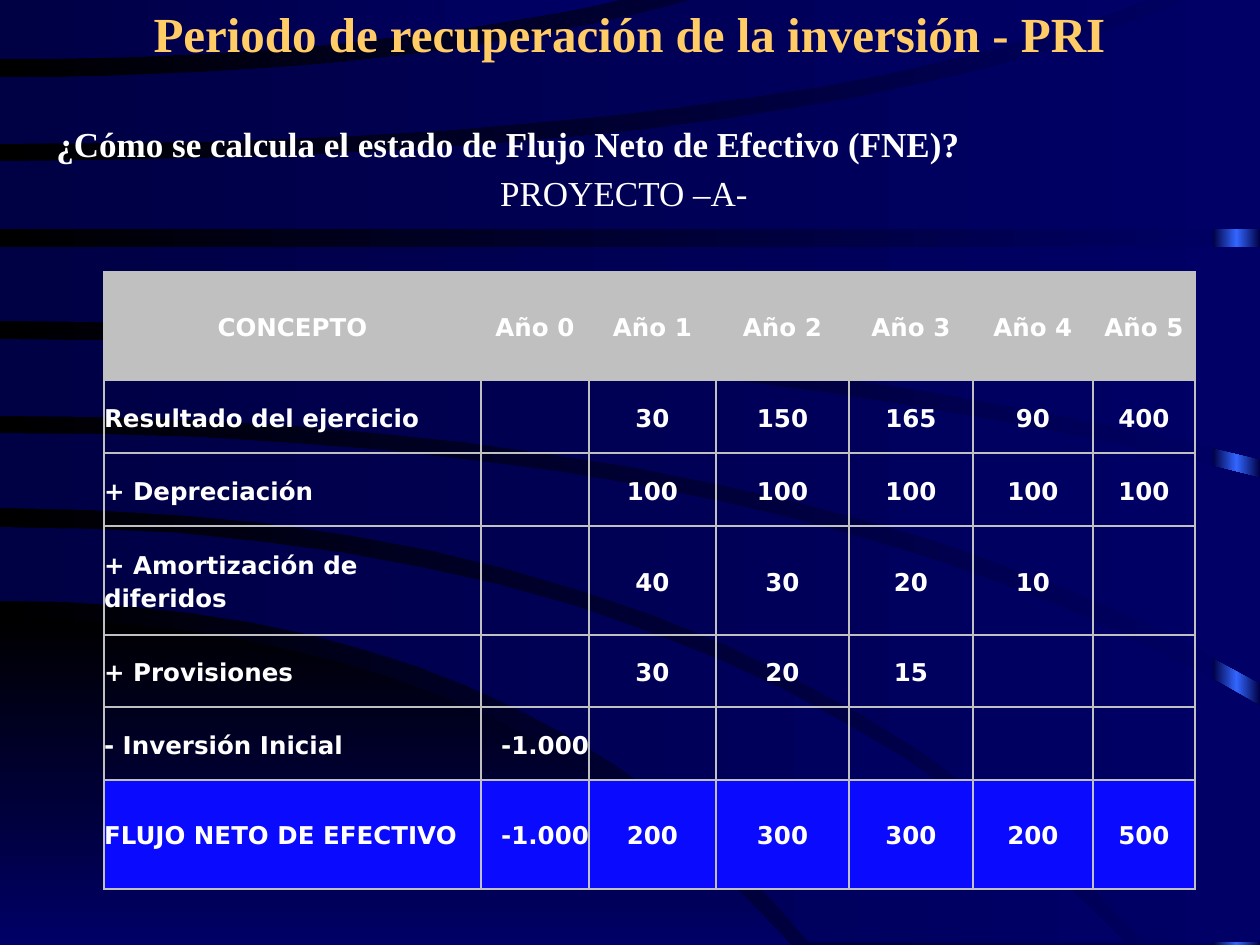
"""Builds the slide on the net cash flow of project A."""
import copy

import pptx
import pptx.dml.color
import pptx.enum.shapes
import pptx.enum.text
import pptx.oxml
import pptx.oxml.ns
import pptx.util

RGBColor = pptx.dml.color.RGBColor
ALIGN = pptx.enum.text.PP_ALIGN
MIDDLE = pptx.enum.text.MSO_ANCHOR.MIDDLE
Pt = pptx.util.Pt

BLACK = RGBColor(0x00, 0x00, 0x00)
NAVY = RGBColor(0x00, 0x00, 0x66)
DARK_NAVY = RGBColor(0x00, 0x00, 0x44)
BRIGHT_BLUE = RGBColor(0x33, 0x66, 0xFF)
TOTAL_BLUE = RGBColor(0x0A, 0x0A, 0xFF)
SILVER = RGBColor(0xC0, 0xC0, 0xC0)
GOLD = RGBColor(0xFF, 0xCC, 0x66)
WHITE = RGBColor(0xFF, 0xFF, 0xFF)

PX = 914400 / 126
WIDTH, HEIGHT = 1260, 945
SERIF, SANS = "Times New Roman", "DejaVu Sans"

TITLE = "Periodo de recuperación de la inversión - PRI"
QUESTION = "¿Cómo se calcula el estado de Flujo Neto de Efectivo (FNE)?"
PROJECT = "PROYECTO –A-"

CASH_FLOW = [
    ("CONCEPTO", "Año 0", "Año 1", "Año 2", "Año 3", "Año 4", "Año 5"),
    ("Resultado del ejercicio", "", "30", "150", "165", "90", "400"),
    ("+ Depreciación", "", "100", "100", "100", "100", "100"),
    ("+ Amortización de diferidos", "", "40", "30", "20", "10", ""),
    ("+ Provisiones", "", "30", "20", "15", "", ""),
    ("- Inversión Inicial", "-1.000", "", "", "", "", ""),
    ("FLUJO NETO DE EFECTIVO", "-1.000", "200", "300", "300", "200", "500"),
]
COLUMN_WIDTHS = [377, 108, 127, 133, 124, 120, 102]
ROW_HEIGHTS = [108, 73, 73, 109, 72, 73, 109]
TABLE_LEFT, TABLE_TOP = 104, 272

CURVE_STEPS = 16
CORNER_EDGE = (619, 503, 791, HEIGHT)
BAND_EDGES = [
    ((527, 730, 1125, 942), (601, 532, 809, 942)),
    ((433, 806, WIDTH, 706), (508, 740, 1145, 942)),
    ((339, 718, WIDTH, 478), (416, 796, WIDTH, 683)),
    ((247, 630, WIDTH, 247), (321, 694, WIDTH, 459)),
    ((161, 842, 1188, -3), (229, 630, WIDTH, 229)),
    ((77, 426, 701, -3), (144, 783, 1155, -3)),
    ((-3, 315, 631, -3), (59, 359, 631, -3)),
]


def emu(px):
    return round(px * PX)


def trace_edge(start_y, bend_x, end_x, end_y):
    steps = [i / CURVE_STEPS for i in range(CURVE_STEPS + 1)]
    return [(round(2 * t * (1 - t) * bend_x + t * t * end_x),
             round(start_y + t * t * (end_y - start_y))) for t in steps]


def trace_band(upper_edge, lower_edge):
    upper, lower = trace_edge(*upper_edge), trace_edge(*lower_edge)
    (upper_x, upper_y), (lower_x, lower_y) = upper[-1], lower[-1]
    outer = min if upper_y < upper[0][1] else max
    corner = (max(upper_x, lower_x), outer(upper_y, lower_y))
    return upper + [corner] + lower[::-1]


def paint_gradient(fill, start, end, angle=0):
    fill.gradient()
    fill.gradient_angle = angle
    for stop, color, position in zip(fill.gradient_stops, (start, end), (0, 1)):
        stop.color.rgb = color
        stop.position = position


def add_outline(slide, points, start, end, angle=0):
    builder = slide.shapes.build_freeform(*points[0], scale=PX)
    builder.add_line_segments(points[1:], close=True)
    outline = builder.convert_to_shape()
    outline.shadow.inherit = False
    outline.line.fill.background()
    paint_gradient(outline.fill, start, end, angle)


def add_glow_strip(slide):
    strip = slide.shapes.add_shape(
        pptx.enum.shapes.MSO_SHAPE.RECTANGLE, emu(1213), 0, emu(47), emu(HEIGHT))
    strip.shadow.inherit = False
    strip.line.fill.background()
    paint_gradient(strip.fill, DARK_NAVY, BRIGHT_BLUE)
    strip.fill.gradient_stops[1].position = 0.5
    stops = strip.element.spPr.find(".//" + pptx.oxml.ns.qn("a:gsLst"))
    last = copy.deepcopy(stops[0])
    last.set("pos", "100000")
    stops.append(last)


def add_run(paragraph, text, size, font, color, bold=True):
    run = paragraph.add_run()
    run.text = text
    run.font.size = Pt(size)
    run.font.name = font
    run.font.bold = bold
    run.font.color.rgb = color


def add_frame(slide, *box):
    frame = slide.shapes.add_textbox(*map(emu, box)).text_frame
    frame.word_wrap = True
    return frame


def add_borders(cell):
    properties = cell._tc.get_or_add_tcPr()
    for side in "LRTB":
        properties.append(pptx.oxml.parse_xml(
            f'<a:ln{side} {pptx.oxml.ns.nsdecls("a")} w="12700"><a:solidFill>'
            f'<a:srgbClr val="{SILVER}"/></a:solidFill></a:ln{side}>'))


def fill_cell(cell, text, align, color):
    cell.margin_left = cell.margin_right = cell.margin_top = cell.margin_bottom = 0
    cell.vertical_anchor = MIDDLE
    add_borders(cell)
    if color:
        cell.fill.solid()
        cell.fill.fore_color.rgb = color
    else:
        cell.fill.background()
    if text:
        paragraph = cell.text_frame.paragraphs[0]
        paragraph.alignment = align
        paragraph.line_spacing = 1.15
        paragraph.space_after = Pt(10)
        add_run(paragraph, text, 14, SANS, WHITE)


def add_cash_flow(slide):
    table = slide.shapes.add_table(
        len(CASH_FLOW), len(COLUMN_WIDTHS), emu(TABLE_LEFT), emu(TABLE_TOP),
        emu(sum(COLUMN_WIDTHS)), emu(sum(ROW_HEIGHTS))).table
    table.first_row = table.horz_banding = False
    for column, width in zip(table.columns, COLUMN_WIDTHS):
        column.width = emu(width)
    row_fills = {0: SILVER, len(CASH_FLOW) - 1: TOTAL_BLUE}
    for r, (concept_row, height) in enumerate(zip(CASH_FLOW, ROW_HEIGHTS)):
        table.rows[r].height = emu(height)
        for c, text in enumerate(concept_row):
            align = ALIGN.CENTER
            if r > 0 and c < 2:
                align = (ALIGN.LEFT, ALIGN.RIGHT)[c]
            fill_cell(table.cell(r, c), text, align, row_fills.get(r))


def main():
    deck = pptx.Presentation()
    deck.slide_width, deck.slide_height = emu(WIDTH), emu(HEIGHT)
    slide = deck.slides.add_slide(deck.slide_layouts[6])
    paint_gradient(slide.background.fill, BLACK, NAVY)

    add_glow_strip(slide)
    add_outline(slide, trace_edge(*CORNER_EDGE) + [(0, HEIGHT)], BLACK, NAVY, 270)
    for upper_edge, lower_edge in BAND_EDGES:
        add_outline(slide, trace_band(upper_edge, lower_edge), DARK_NAVY, NAVY)

    title = add_frame(slide, 94, 0, 1071, 66)
    title.vertical_anchor = MIDDLE
    title.paragraphs[0].alignment = ALIGN.CENTER
    add_run(title.paragraphs[0], TITLE, 28, SERIF, GOLD)

    intro = add_frame(slide, 44, 116, 1160, 804)
    add_run(intro.paragraphs[0], QUESTION, 20, SERIF, WHITE)
    project = intro.add_paragraph()
    project.alignment = ALIGN.CENTER
    project.space_before = Pt(4)
    add_run(project, PROJECT, 20, SERIF, WHITE, bold=False)

    add_cash_flow(slide)
    deck.save("out.pptx")


if __name__ == "__main__":
    main()
